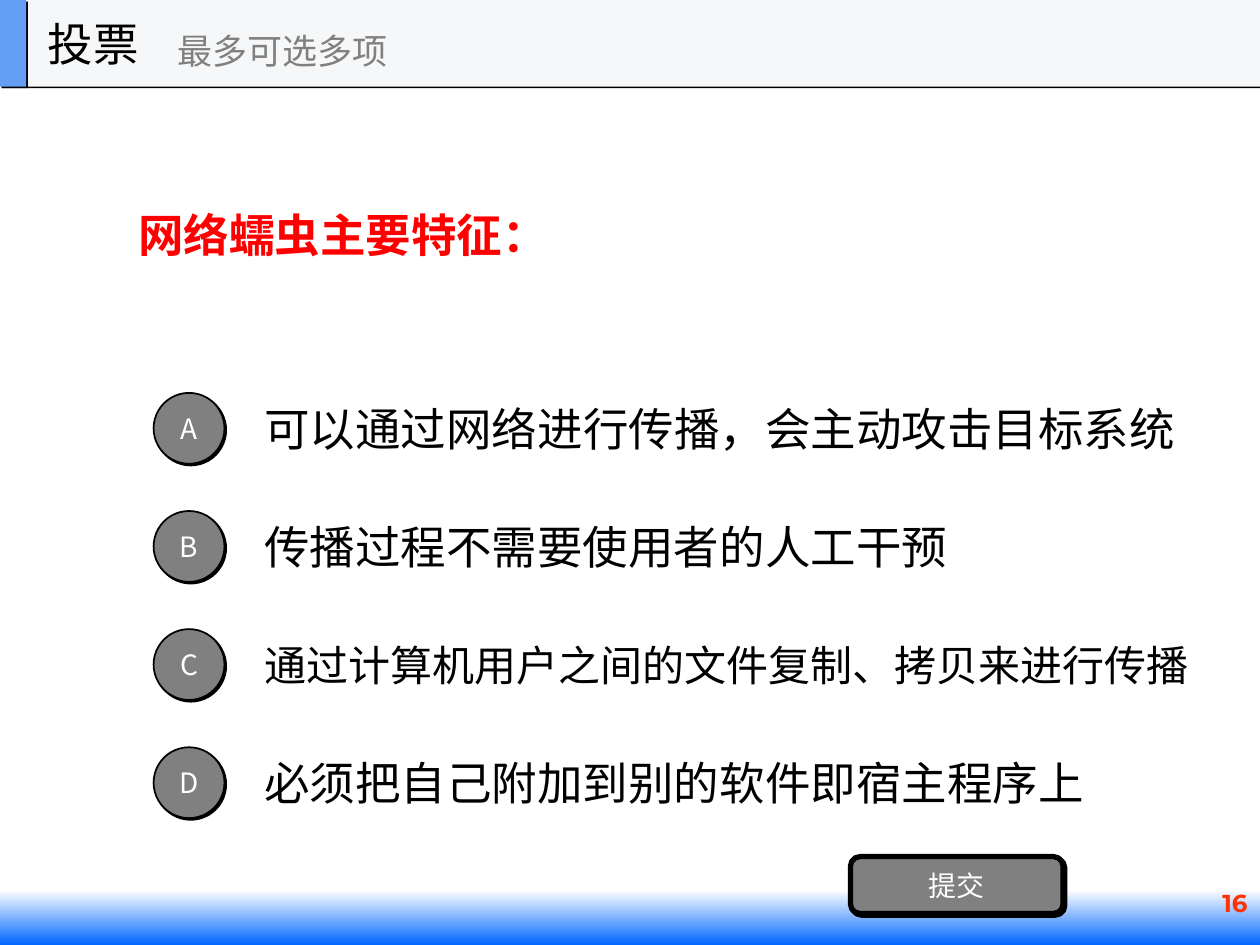
"""Build a multiple-choice poll slide about network worms."""
from dataclasses import dataclass

from lxml.etree import SubElement
from pptx import Presentation
from pptx.dml.color import RGBColor
from pptx.enum.shapes import MSO_SHAPE
from pptx.enum.text import MSO_ANCHOR, PP_ALIGN
from pptx.oxml.ns import qn
from pptx.util import Pt

CJK = "Noto Sans CJK SC"
BLACK, WHITE, GRAY = "000000", "FFFFFF", "808080"
OPTION_TOP, OPTION_PITCH, OPTION_HEIGHT, BADGE_SIZE = 219.5, 67.5, 50.5, 40.5


@dataclass(frozen=True)
class Box:
    left: float
    top: float
    width: float
    height: float

    def lengths(self) -> tuple:
        return tuple(Pt(n) for n in (self.left, self.top, self.width, self.height))


@dataclass(frozen=True)
class Option:
    letter: str
    statement: str
    width: float
    size: float = 26


OPTIONS = (
    Option("A", "可以通过网络进行传播，会主动攻击目标系统", 566),
    Option("B", "传播过程不需要使用者的人工干预", 504),
    Option("C", "通过计算机用户之间的文件复制、拷贝来进行传播", 576, 24),
    Option("D", "必须把自己附加到别的软件即宿主程序上", 504),
)


def rgb(color: str) -> RGBColor:
    return RGBColor.from_string(color)


def write(shape, text: str, *, size: float, color: str = BLACK, font: str = CJK,
          bold: bool = False, align=PP_ALIGN.LEFT, anchor=MSO_ANCHOR.MIDDLE,
          wrap: bool = True) -> None:
    frame = shape.text_frame
    frame.word_wrap = wrap
    frame.vertical_anchor = anchor
    paragraph = frame.paragraphs[0]
    paragraph.alignment = align
    run = paragraph.add_run()
    run.text = text
    run.font.name = font
    run.font.size = Pt(size)
    run.font.bold = bold
    run.font.color.rgb = rgb(color)
    SubElement(run.font._element, qn("a:ea"), typeface=font)


def add_label(slide, box: Box, text: str, **text_format) -> None:
    write(slide.shapes.add_textbox(*box.lengths()), text, **text_format)


def add_shadow(shape) -> None:
    shape.shadow.inherit = False
    effects = shape._element.spPr.find(qn("a:effectLst"))
    shadow = SubElement(effects, qn("a:outerShdw"), blurRad="0", dist=str(Pt(1.4)),
                        dir="2700000", algn="ctr", rotWithShape="0")
    SubElement(shadow, qn("a:srgbClr"), val=BLACK)


def add_panel(slide, kind, box: Box, fill: str, line_width: float = 0):
    panel = slide.shapes.add_shape(kind, *box.lengths())
    panel.fill.solid()
    panel.fill.fore_color.rgb = rgb(fill)
    if line_width:
        panel.line.color.rgb = rgb(BLACK)
        panel.line.width = Pt(line_width)
    else:
        panel.line.fill.background()
    add_shadow(panel)
    return panel


def add_footer_band(slide, box: Box) -> None:
    band = slide.shapes.add_shape(MSO_SHAPE.RECTANGLE, *box.lengths())
    band.shadow.inherit = False
    band.line.fill.background()
    band.fill.gradient()
    band.fill.gradient_angle = 270
    for stop, color, position in zip(band.fill.gradient_stops, (WHITE, "0066FF"), (0, 1)):
        stop.color.rgb = rgb(color)
        stop.position = position


def add_option(slide, option: Option, top: float) -> None:
    add_label(slide, Box(144, top, option.width, OPTION_HEIGHT), option.statement,
              size=option.size)
    badge_top = top + (OPTION_HEIGHT - BADGE_SIZE) / 2
    badge = add_panel(slide, MSO_SHAPE.OVAL,
                      Box(87.75, badge_top, BADGE_SIZE, BADGE_SIZE), GRAY, 1)
    write(badge, option.letter, size=16, color=WHITE, align=PP_ALIGN.CENTER)


def main() -> None:
    presentation = Presentation()
    presentation.slide_width, presentation.slide_height = Pt(720), Pt(540)
    slide = presentation.slides.add_slide(presentation.slide_layouts[6])

    add_footer_band(slide, Box(0, 508.5, 720, 31.5))
    add_label(slide, Box(72, 50, 576, 168), "网络蠕虫主要特征：",
              size=26, color="FF0000", bold=True)
    for row, option in enumerate(OPTIONS):
        add_option(slide, option, OPTION_TOP + row * OPTION_PITCH)

    submit = add_panel(slide, MSO_SHAPE.ROUNDED_RECTANGLE,
                       Box(486, 489.5, 121.5, 32.5), GRAY, 3)
    write(submit, "提交", size=16, color=WHITE, align=PP_ALIGN.CENTER)

    add_panel(slide, MSO_SHAPE.RECTANGLE, Box(0, 0, 720, 49.5), "F6F7F8")
    add_panel(slide, MSO_SHAPE.RECTANGLE, Box(0, 0, 15, 49.5), "639EF4")
    add_label(slide, Box(20.25, 0, 150, 49.5), "投票", size=26, wrap=False)
    add_label(slide, Box(94.5, 8.75, 180, 40.5), "最多可选多项",
              size=20, color=GRAY, wrap=False)
    add_label(slide, Box(507.5, 504, 212.5, 36), "16", size=14, color="FF3300",
              font="Montserrat", bold=True, align=PP_ALIGN.RIGHT, anchor=MSO_ANCHOR.TOP)
    presentation.save("out.pptx")


if __name__ == "__main__":
    main()
